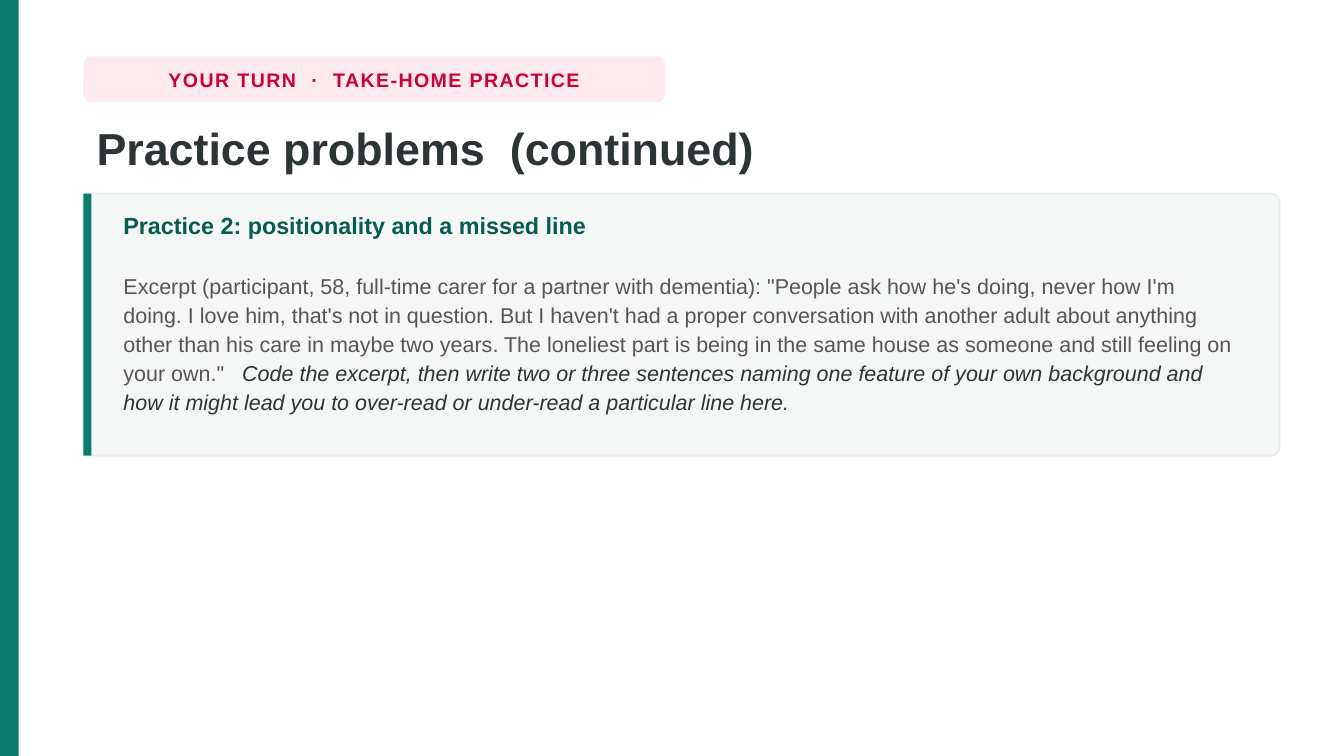
from dataclasses import dataclass
from typing import NamedTuple

from pptx import Presentation
from pptx.dml.color import RGBColor
from pptx.enum.shapes import MSO_SHAPE as Form
from pptx.enum.text import MSO_ANCHOR as Anchor, PP_ALIGN as Align
from pptx.util import Inches, Pt

COLS, CELL = 500, 0.02  # grid of the slide, cell side in inches
ROWS = COLS * 9 / 16


@dataclass(frozen=True)
class Theme:
    font: str = "Arial"
    teal: str = "0B7B6B"
    deep: str = "065C50"
    red: str = "CC0033"
    blush: str = "FDEAEF"
    ink: str = "2D3436"
    grey: str = "555555"
    card: str = "F4F7F6"
    edge: str = "E8ECEE"
    tag: float = 10.5
    title: float = 24
    head: float = 12.5
    body: float = 11.5


class Box(NamedTuple):
    """Left, top, width and height in grid cells."""
    x: float
    y: float
    w: float
    h: float

    def place(self) -> list:
        return [Inches(n * CELL) for n in self]


@dataclass(frozen=True)
class Panel:
    box: Box
    fill: str
    round: float = 0
    line: str = ""


@dataclass(frozen=True)
class Run:
    text: str
    size: float
    color: str
    bold: bool = False
    italic: bool = False
    track: float = 0  # letter spacing in points


@dataclass(frozen=True)
class Para:
    runs: tuple
    lead: float = 1
    after: float = 0
    align: Align = Align.LEFT


def draw_panel(slide, panel: Panel) -> None:
    form = Form.ROUNDED_RECTANGLE if panel.round else Form.RECTANGLE
    shape = slide.shapes.add_shape(form, *panel.box.place())
    shape.shadow.inherit = False
    if panel.round:
        shape.adjustments[0] = panel.round
    shape.fill.solid()
    shape.fill.fore_color.rgb = RGBColor.from_string(panel.fill)
    if panel.line:
        shape.line.color.rgb = RGBColor.from_string(panel.line)
        shape.line.width = Pt(1)
    else:
        shape.line.fill.background()


def add_run(para, run: Run, font: str) -> None:
    part = para.add_run()
    part.text = run.text
    face = part.font
    face.name, face.size = font, Pt(run.size)
    face.bold, face.italic = run.bold, run.italic
    face.color.rgb = RGBColor.from_string(run.color)
    if run.track:
        part._r.get_or_add_rPr().set("spc", str(round(run.track * 100)))


def draw_text(slide, box: Box, paras: list[Para], font: str,
              anchor: Anchor = Anchor.TOP, wrap: bool = True,
              inset: float = 2.5) -> None:
    frame = slide.shapes.add_textbox(*box.place()).text_frame
    frame.word_wrap, frame.vertical_anchor = wrap, anchor
    frame.margin_top = Inches(inset * CELL)
    for i, item in enumerate(paras):
        para = frame.add_paragraph() if i else frame.paragraphs[0]
        para.alignment, para.line_spacing = item.align, item.lead
        para.space_after = Pt(item.after)
        for run in item.runs:
            add_run(para, run, font)


def main() -> None:
    look = Theme()
    deck = Presentation()
    deck.slide_width, deck.slide_height = Inches(COLS * CELL), Inches(ROWS * CELL)
    slide = deck.slides.add_slide(deck.slide_layouts[6])

    left, wide = 31, 445
    tag = Box(left, 21, 216.5, 17)
    card = Box(left, 72, wide, 97.5)
    inner = Box(card.x + 10, card.y + 4, wide - 21, card.h - 8)

    # Side band, tag, card and its accent
    for panel in (
        Panel(Box(0, 0, 7, ROWS), look.teal),
        Panel(tag, look.blush, round=0.18),
        Panel(card, look.card, round=0.03, line=look.edge),
        Panel(Box(left, card.y, 3, card.h), look.teal),
    ):
        draw_panel(slide, panel)

    # Tag text, with wide gaps round the dot
    words = (("YOUR TURN", 0.8), (" ", 4.5), ("·", 0.8), (" ", 4.5),
             ("TAKE-HOME PRACTICE", 0.8))
    label = tuple(Run(word, look.tag, look.red, bold=True, track=track)
                  for word, track in words)
    draw_text(slide, tag, [Para(label, align=Align.CENTER)], look.font,
              Anchor.MIDDLE, wrap=False)

    # Title
    title = tuple(Run(word, look.title, look.ink, bold=True, track=track)
                  for word, track in (("Practice problems", 0), (" ", 6.7),
                                      ("(continued)", 0)))
    draw_text(slide, Box(left, 42, wide, 28), [Para(title, lead=1.02)], look.font)

    # Practice problem
    head = Run("Practice 2: positionality and a missed line",
               look.head, look.deep, bold=True)
    quote = Run(
        "Excerpt (participant, 58, full-time carer for a partner with dementia): "
        "\"People ask how he's doing, never how I'm doing. I love him, that's not "
        "in question. But I haven't had a proper conversation with another adult "
        "about anything other than his care in maybe two years. The loneliest part "
        "is being in the same house as someone and still feeling on your own.\"",
        look.body, look.grey)
    gap = Run(" ", look.body, look.grey, track=6.4)
    task = Run(
        "Code the excerpt, then write two or three sentences naming one feature of "
        "your own background and how it might lead you to over-read or under-read "
        "a particular line here.", look.body, look.ink, italic=True)
    draw_text(slide, inner, [Para((head,), lead=1.12, after=16.5),
                             Para((quote, gap, task), lead=1.12)],
              look.font, inset=1.5)

    deck.save("out.pptx")


if __name__ == "__main__":
    main()
